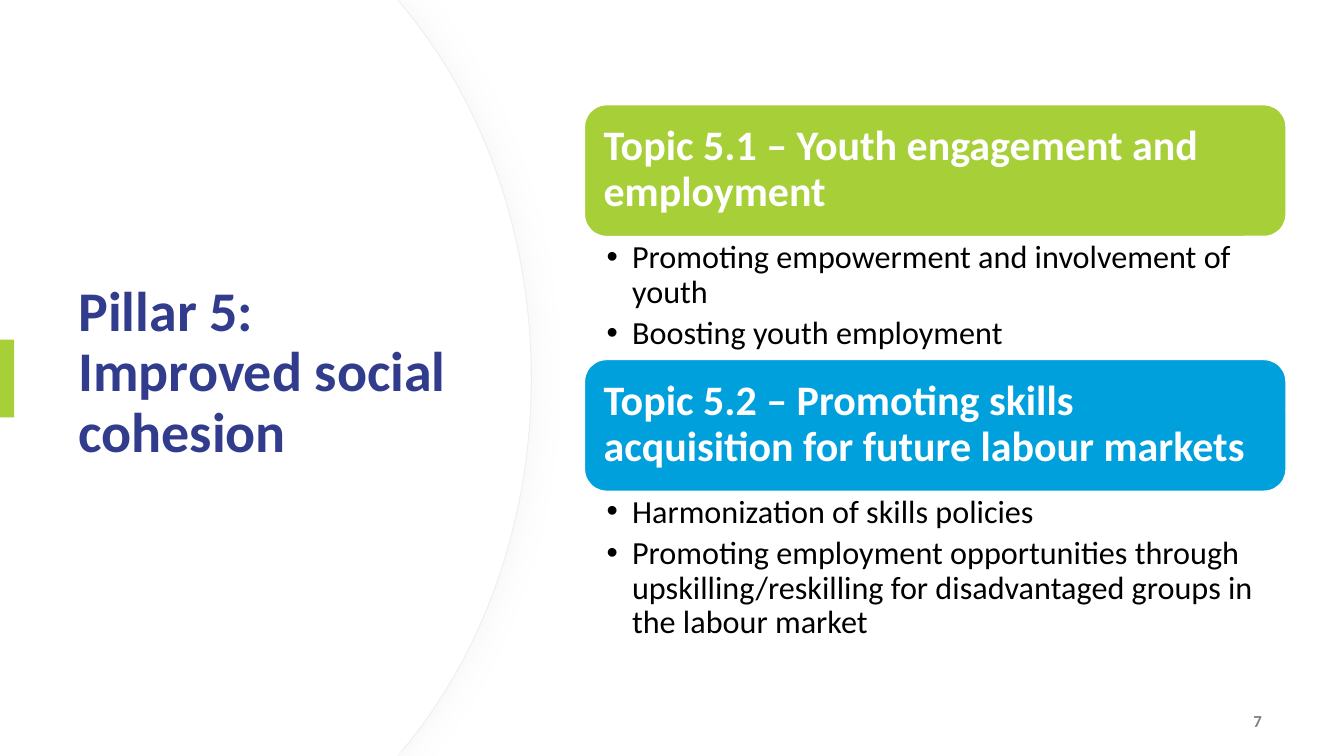
"""Build the Pillar 5 slide: a curved title panel beside two stacked topics."""
from dataclasses import dataclass
from typing import Optional

from lxml.etree import SubElement
from pptx import Presentation
from pptx.dml.color import RGBColor
from pptx.enum.shapes import MSO_SHAPE as SHAPE
from pptx.enum.text import MSO_ANCHOR as ANCHOR, PP_ALIGN as ALIGN
from pptx.oxml import parse_xml
from pptx.oxml.ns import nsdecls, qn
from pptx.util import Cm, Pt

WHITE = RGBColor(0xFF, 0xFF, 0xFF)
BLACK = RGBColor(0x00, 0x00, 0x00)
GREY = RGBColor(0x80, 0x80, 0x80)
EDGE = RGBColor(0xEF, 0xEF, 0xEF)
NAVY = RGBColor(0x32, 0x3C, 0x8C)
GREEN = RGBColor(0xA6, 0xCF, 0x38)
BLUE = RGBColor(0x00, 0xA0, 0xDC)

FONT = "Calibri"
SLIDE_W, SLIDE_H = 33.87, 19.05
TOPIC_LEFT, TOPIC_TOP, TOPIC_W, HEADING_H = 14.73, 2.64, 17.68, 3.32
SHADOW = (
    f'<a:effectLst {nsdecls("a")}><a:outerShdw blurRad="254000" dist="38100" dir="0">'
    '<a:srgbClr val="D9D9D9"><a:alpha val="20000"/></a:srgbClr>'
    "</a:outerShdw></a:effectLst>"
)


@dataclass
class Topic:
    heading: str
    color: RGBColor
    points: list[str]
    body_h: float


@dataclass
class Style:
    size: float
    color: RGBColor
    bold: bool = True
    align: ALIGN = ALIGN.LEFT
    anchor: ANCHOR = ANCHOR.MIDDLE
    spacing: float = 0.9
    after: float = 0
    bullet: bool = False
    insets: tuple[float, float, float, float] = (0.25, 0.13, 0.25, 0.13)


TITLE = Style(40, NAVY)
NUMBER = Style(12, GREY, align=ALIGN.RIGHT, spacing=1)
HEADING = Style(30, WHITE, insets=(0.32, 0.3, 0.3, 0.33))
BODY = Style(23, BLACK, bold=False, anchor=ANCHOR.TOP, after=4.6, bullet=True,
             insets=(0.56, 0.1, 0.58, 0.1))

TOPICS = [
    Topic("Topic 5.1 – Youth engagement and employment", GREEN,
          ["Promoting empowerment and involvement of youth",
           "Boosting youth employment"], 3.1),
    Topic("Topic 5.2 – Promoting skills acquisition for future labour markets", BLUE,
          ["Harmonization of skills policies",
           "Promoting employment opportunities through upskilling/reskilling "
           "for disadvantaged groups in the labour market"], 4.06),
]


def write(sp, lines: list[str], style: Style) -> None:
    """Fill a shape with styled paragraphs."""
    tf = sp.text_frame
    tf.word_wrap = True
    tf.vertical_anchor = style.anchor
    tf.margin_left, tf.margin_top, tf.margin_right, tf.margin_bottom = map(Cm, style.insets)
    tf.text = "\n".join(lines)
    for p in tf.paragraphs:
        if style.bullet:
            pPr = p._p.get_or_add_pPr()
            pPr.set("marL", str(Cm(0.64)))
            pPr.set("indent", str(-Cm(0.64)))
            SubElement(pPr, qn("a:buFont")).set("typeface", "Arial")
            SubElement(pPr, qn("a:buChar")).set("char", "•")
        p.alignment = style.align
        p.line_spacing = style.spacing
        p.space_after = Pt(style.after)
        for r in p.runs:
            r.font.name = FONT
            r.font.size = Pt(style.size)
            r.font.bold = style.bold
            r.font.color.rgb = style.color


def add_text(s, box: tuple[float, ...], lines: list[str], style: Style) -> None:
    """Add a text box."""
    write(s.shapes.add_textbox(*map(Cm, box)), lines, style)


def paint(sp, fill: RGBColor, line: Optional[RGBColor] = None, width: float = 1) -> None:
    """Set a flat fill and an optional outline."""
    sp.shadow.inherit = False
    sp.fill.solid()
    sp.fill.fore_color.rgb = fill
    if line is None:
        sp.line.fill.background()
    else:
        sp.line.color.rgb = line
        sp.line.width = Pt(width)


def add_block(s, kind: SHAPE, box: tuple[float, ...], fill: RGBColor,
              line: Optional[RGBColor] = None):
    """Add a filled preset shape."""
    sp = s.shapes.add_shape(kind, *map(Cm, box))
    paint(sp, fill, line)
    return sp


def bend(segment, controls: list[tuple[float, float]]) -> None:
    """Turn a straight outline segment into a cubic curve."""
    segment.tag = qn("a:cubicBezTo")
    for i, (x, y) in enumerate(controls):
        pt = segment.makeelement(qn("a:pt"), {"x": str(Cm(x)), "y": str(Cm(y))})
        segment.insert(i, pt)


def add_panel(s, shift: float = 0):
    """Add the white panel with a curved right side."""
    start, steep, flat = (10.19 - shift, 0.2), (12.17 - shift, 2.59), (13.39 - shift, 5.89)
    upper = [(10.01, 0), start]
    lower = [(x, SLIDE_H - y) for x, y in reversed(upper)]
    outline = upper + [(flat[0], SLIDE_H / 2)] + lower + [(0, SLIDE_H)]
    builder = s.shapes.build_freeform(0, 0)
    builder.add_line_segments([(Cm(x), Cm(y)) for x, y in outline], close=True)
    sp = builder.convert_to_shape()
    segments = list(sp._element.iter(qn("a:lnTo")))
    bend(segments[2], [steep, flat])
    bend(segments[3], [(x, SLIDE_H - y) for x, y in (flat, steep)])
    return sp


def main() -> None:
    """Build and save the slide."""
    prs = Presentation()
    prs.slide_width, prs.slide_height = Cm(SLIDE_W), Cm(SLIDE_H)
    s = prs.slides.add_slide(prs.slide_layouts[6])

    outer = add_panel(s)
    paint(outer, WHITE, EDGE, 0.75)
    spPr = outer._element.spPr
    spPr.replace(spPr.find(qn("a:effectLst")), parse_xml(SHADOW))
    paint(add_panel(s, 0.03), WHITE)

    add_text(s, (1.73, 3.13, 10, 12.57), ["Pillar 5: Improved social cohesion"], TITLE)
    add_block(s, SHAPE.RECTANGLE, (0, 8.56, 0.36, 1.96), GREEN)
    add_text(s, (24.43, 17.65, 7.62, 1.02), ["7"], NUMBER)

    top = TOPIC_TOP
    for topic in TOPICS:
        heading = add_block(s, SHAPE.ROUNDED_RECTANGLE,
                            (TOPIC_LEFT, top, TOPIC_W, HEADING_H), topic.color, WHITE)
        write(heading, [topic.heading], HEADING)
        top += HEADING_H
        add_text(s, (TOPIC_LEFT, top, TOPIC_W, topic.body_h), topic.points, BODY)
        top += topic.body_h

    prs.save("out.pptx")


if __name__ == "__main__":
    main()
